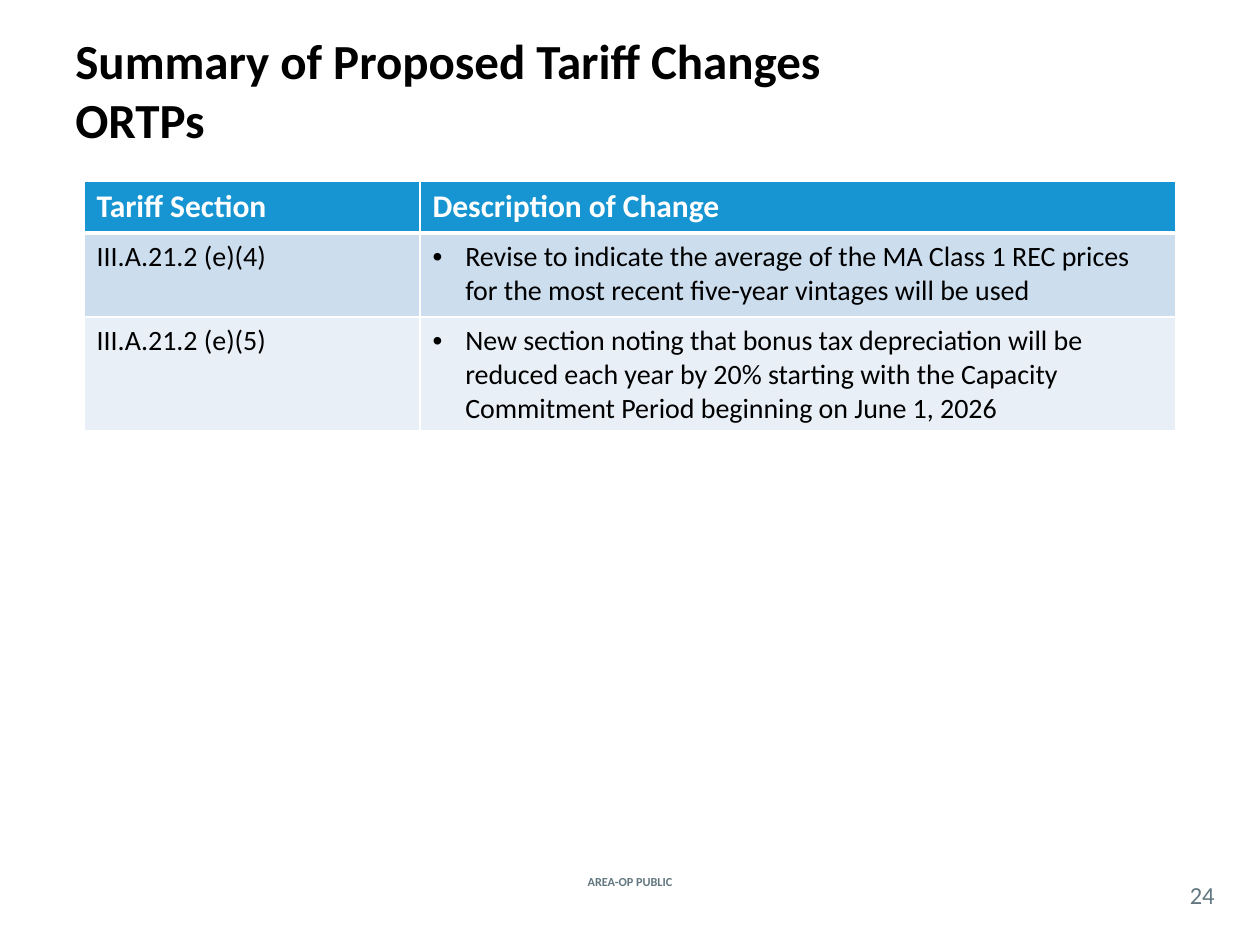
from dataclasses import dataclass

from lxml import etree
from pptx import Presentation
from pptx.dml.color import RGBColor
from pptx.enum.text import MSO_ANCHOR, PP_ALIGN
from pptx.oxml.ns import qn
from pptx.util import Inches, Pt

MIDDLE = MSO_ANCHOR.MIDDLE
LEFT, CENTER = PP_ALIGN.LEFT, PP_ALIGN.CENTER
GRID_UNIT = Inches(1) / 12
BLANK_LAYOUT = 6


@dataclass(frozen=True)
class Theme:
    font: str = "Calibri"
    black: str = "000000"
    white: str = "FFFFFF"
    gray: str = "62777F"
    header: str = "1795D2"
    bands: tuple = ("CCDDEE", "E8EFF7")
    title_size: int = 28
    header_size: int = 18
    body_size: int = 16
    number_size: int = 14
    footer_size: int = 7
    border: int = 1
    header_border: int = 3


THEME = Theme()
COLUMN_WIDTHS = (32, 72)
ROW_HEIGHTS = (4.9, 8, 10.8)
HEADINGS = ("Tariff Section", "Description of Change")
CHANGES = (
    ("III.A.21.2 (e)(4)",
     "Revise to indicate the average of the MA Class 1 REC prices "
     "for the most recent five-year vintages will be used"),
    ("III.A.21.2 (e)(5)",
     "New section noting that bonus tax depreciation will be reduced each year "
     "by 20% starting with the Capacity Commitment Period beginning on June 1, 2026"),
)


def grid(units):
    return round(units * GRID_UNIT)


def style_paragraph(paragraph, size, color, bold=False):
    font = paragraph.font
    font.name = THEME.font
    font.size = Pt(size)
    font.bold = bold
    font.color.rgb = RGBColor.from_string(color)


def add_text(slide, area, text, size, color, bold=False, align=LEFT, inset=True):
    shape = slide.shapes.add_textbox(*map(grid, area))
    frame = shape.text_frame
    frame.word_wrap = True
    frame.vertical_anchor = MIDDLE
    if not inset:
        frame.margin_left = frame.margin_right = 0
        frame.margin_top = frame.margin_bottom = 0
    paragraph = frame.paragraphs[0]
    paragraph.text = text
    paragraph.alignment = align
    style_paragraph(paragraph, size, color, bold)


def add_bullet(paragraph):
    properties = paragraph._p.get_or_add_pPr()
    indent = Inches(0.26)
    properties.set("marL", str(indent))
    properties.set("indent", str(-indent))
    etree.SubElement(properties, qn("a:buFont"), typeface="Arial")
    etree.SubElement(properties, qn("a:buChar"), char="•")


def set_borders(cell, widths):
    properties = cell._tc.get_or_add_tcPr()
    for position, (side, width) in enumerate(widths.items()):
        line = etree.Element(qn(f"a:ln{side}"), w=str(Pt(width)))
        fill = etree.SubElement(line, qn("a:solidFill"))
        etree.SubElement(fill, qn("a:srgbClr"), val=THEME.white)
        properties.insert(position, line)


def fill_cell(cell, text, is_header, has_bullet, fill):
    paragraph = cell.text_frame.paragraphs[0]
    paragraph.text = text
    if has_bullet:
        add_bullet(paragraph)
    if is_header:
        style_paragraph(paragraph, THEME.header_size, THEME.white, True)
    else:
        style_paragraph(paragraph, THEME.body_size, THEME.black)
    cell.fill.solid()
    cell.fill.fore_color.rgb = RGBColor.from_string(fill)


def add_change_table(slide, left, top):
    rows = (HEADINGS, *CHANGES)
    area = (left, top, sum(COLUMN_WIDTHS), sum(ROW_HEIGHTS))
    table = slide.shapes.add_table(len(rows), len(HEADINGS), *map(grid, area)).table
    for column, width in zip(table.columns, COLUMN_WIDTHS):
        column.width = grid(width)
    for row_index, (texts, height) in enumerate(zip(rows, ROW_HEIGHTS)):
        table.rows[row_index].height = grid(height)
        is_header = row_index == 0
        fill = THEME.header if is_header else THEME.bands[(row_index - 1) % 2]
        widths = dict.fromkeys("LRTB", THEME.border)
        if is_header:
            widths["B"] = THEME.header_border
        elif row_index == 1:
            widths["T"] = THEME.header_border
        for column_index, text in enumerate(texts):
            cell = table.cell(row_index, column_index)
            has_bullet = not is_header and column_index == 1
            fill_cell(cell, text, is_header, has_bullet, fill)
            set_borders(cell, widths)


def main():
    presentation = Presentation()
    presentation.slide_width = grid(120)
    presentation.slide_height = grid(90)
    slide = presentation.slides.add_slide(presentation.slide_layouts[BLANK_LAYOUT])
    add_text(slide, (51.2, 83, 17.6, 2), "AREA-OP PUBLIC",
             THEME.footer_size, THEME.gray, bold=True, align=CENTER)
    add_text(slide, (112, 83.5, 5, 3.5), "24",
             THEME.number_size, THEME.gray, align=CENTER, inset=False)
    add_text(slide, (6, 1, 108, 15), "Summary of Proposed Tariff Changes \vORTPs",
             THEME.title_size, THEME.black, bold=True)
    add_change_table(slide, 8, 17.3)
    presentation.save("out.pptx")


if __name__ == "__main__":
    main()
